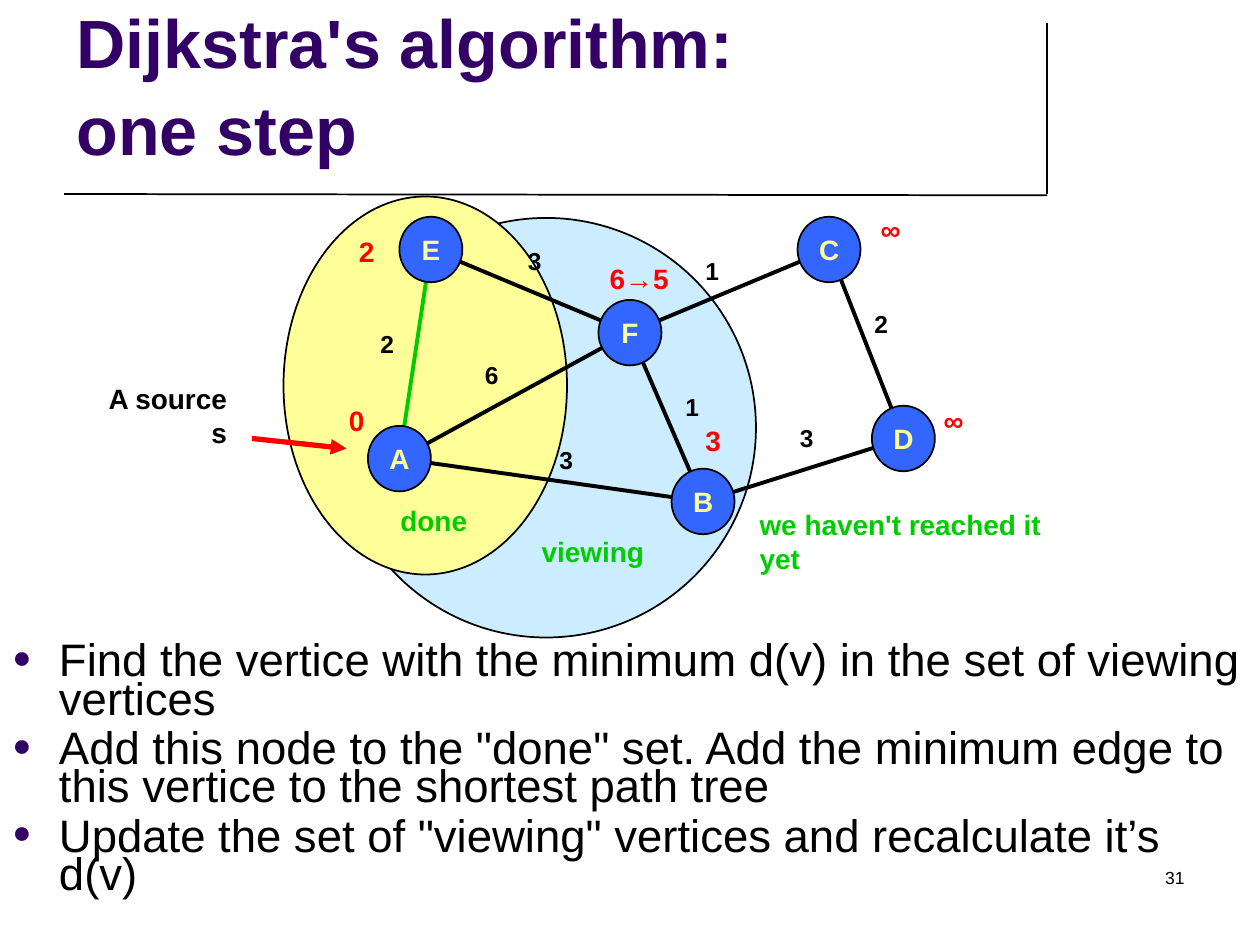
from pptx import Presentation
from pptx.dml.color import RGBColor
from pptx.enum.shapes import MSO_CONNECTOR, MSO_SHAPE
from pptx.enum.text import MSO_ANCHOR, MSO_AUTO_SIZE, PP_ALIGN
from pptx.oxml.ns import qn
from pptx.util import Inches, Pt
from lxml import etree

STRAIGHT = MSO_CONNECTOR.STRAIGHT
OVAL = MSO_SHAPE.OVAL
TOP, MIDDLE, BOTTOM = MSO_ANCHOR.TOP, MSO_ANCHOR.MIDDLE, MSO_ANCHOR.BOTTOM
LEFT, CENTER, RIGHT = PP_ALIGN.LEFT, PP_ALIGN.CENTER, PP_ALIGN.RIGHT
GROW = MSO_AUTO_SIZE.SHAPE_TO_FIT_TEXT

COLORS = {
    "black": "000000", "purple": "330066", "green": "00CC00", "red": "FF0000",
    "node": "3366FF", "done": "FFFF99", "viewing": "CCECFF",
}
NODE_W, NODE_H = 0.5, 0.52
NODES = {
    "A": (3.17, 3.64), "E": (3.42, 1.98), "F": (5, 2.64),
    "C": (6.58, 1.98), "D": (7.17, 3.48), "B": (5.58, 3.98),
}
EDGES = [
    ("E", "A", "2", 2.92, 2.56), ("F", "E", "3", 4.09, 1.9),
    ("F", "C", "1", 5.5, 1.98), ("C", "D", "2", 6.84, 2.4),
    ("B", "D", "3", 6.25, 3.31), ("B", "F", "1", 5.34, 3.06),
    ("A", "F", "6", 3.75, 2.81), ("A", "B", "3", 4.34, 3.48),
]
TREE = [("E", "A")]
DISTANCES = [
    ("0", 2.67, 3.15, 0.32), ("2", 2.75, 1.81, 0.32), ("3", 5.5, 3.31, 0.32),
    ("∞", 6.89, 1.64, 0.38), ("∞", 7.39, 3.15, 0.38),
]
STEPS = [
    "Find the vertice with the minimum d(v) in the set of viewing vertices",
    'Add this node to the "done" set. Add the minimum edge to this vertice to the shortest path tree',
    'Update the set of "viewing" vertices and recalculate it’s d(v)',
]


def rgb(name):
    return RGBColor.from_string(COLORS[name])


def write(p, text, size=16, color="black", bold=False, align=LEFT, spacing=None, before=0):
    p.alignment = align
    p.space_before = Pt(before)
    if spacing:
        p.line_spacing = spacing
    for i, line in enumerate(text.split("\n")):
        if i:
            p.add_line_break()
        r = p.add_run()
        r.text = line
        r.font.name = "Arial"
        r.font.size = Pt(size)
        r.font.bold = bold
        r.font.color.rgb = rgb(color)


class Deck:
    def __init__(self):
        self.prs = Presentation()
        self.prs.slide_width, self.prs.slide_height = Inches(10), Inches(7.5)
        self.s = self.prs.slides.add_slide(self.prs.slide_layouts[6])

    def line(self, start, end, color="black", width=1, arrow=False):
        c = self.s.shapes.add_connector(STRAIGHT, *map(Inches, (*start, *end)))
        c.line.color.rgb = rgb(color)
        c.line.width = Pt(width)
        if arrow:
            etree.SubElement(c.line._get_or_add_ln(), qn("a:tailEnd"), type="triangle")
        etree.SubElement(c._element.spPr, qn("a:effectLst"))

    def ellipse(self, x, y, w, h, fill):
        sp = self.s.shapes.add_shape(OVAL, *map(Inches, (x, y, w, h)))
        sp.shadow.inherit = False
        sp.fill.solid()
        sp.fill.fore_color.rgb = rgb(fill)
        sp.line.color.rgb = rgb("black")
        sp.line.width = Pt(1)
        return sp

    def node(self, name, x, y):
        sp = self.ellipse(x - NODE_W / 2, y - NODE_H / 2, NODE_W, NODE_H, "node")
        tf = sp.text_frame
        tf.vertical_anchor = MIDDLE
        write(tf.paragraphs[0], name, color="done", bold=True, align=CENTER)

    def box(self, x, y, w, h, anchor=TOP, wrap=True):
        tf = self.s.shapes.add_textbox(*map(Inches, (x, y, w, h))).text_frame
        tf.word_wrap = wrap
        tf.vertical_anchor = anchor
        return tf

    def text(self, text, x, y, w, h, anchor=TOP, wrap=True, **style):
        tf = self.box(x, y, w, h, anchor, wrap)
        write(tf.paragraphs[0], text, **style)
        return tf

    def label(self, text, x, y, w, h=0.37, wrap=False, **style):
        tf = self.text(text, x, y, w, h, wrap=wrap, bold=True, **style)
        tf.auto_size = GROW

    def bullets(self, items, x, y, w, h):
        tf = self.box(x, y, w, h)
        for i, item in enumerate(items):
            p = tf.add_paragraph() if i else tf.paragraphs[0]
            pPr = p._p.get_or_add_pPr()
            pPr.set("marL", str(Inches(0.37)))
            pPr.set("indent", str(-Inches(0.37)))
            clr = etree.SubElement(pPr, qn("a:buClr"))
            etree.SubElement(clr, qn("a:srgbClr"), val=COLORS["purple"])
            etree.SubElement(pPr, qn("a:buSzPct"), val="70000")
            etree.SubElement(pPr, qn("a:buFont"), typeface="Arial")
            etree.SubElement(pPr, qn("a:buChar"), char="●")
            write(p, item, size=26, spacing=0.7, before=6.5 if i else 0)


def main():
    deck = Deck()
    deck.line((8.31, 0.18), (8.31, 1.54))
    deck.line((0.51, 1.54), (8.31, 1.55))
    deck.text("31", 7.17, 6.83, 2.33, 0.5, size=10, align=RIGHT)
    deck.ellipse(2.67, 1.73, 3.33, 3.33, "viewing")
    deck.ellipse(2.25, 1.56, 2.25, 3, "done")
    deck.text("Dijkstra's algorithm:\none step", 0.51, 0.13, 7.79, 1.26, anchor=BOTTOM,
              size=39, color="purple", bold=True, spacing=1.06)
    deck.bullets(STEPS, 0, 5.08, 10, 2.42)

    for a, b, *_ in EDGES:
        color = "green" if (a, b) in TREE else "black"
        deck.line(NODES[a], NODES[b], color, 2.25)
    for name, (x, y) in NODES.items():
        deck.node(name, x, y)
    for _, _, weight, x, y in EDGES:
        deck.label(weight, x, y, 0.31, 0.34, size=14)

    deck.line((2, 3.48), (2.75, 3.56), "red", 3, arrow=True)
    for distance, x, y, w in DISTANCES:
        deck.label(distance, x, y, w, color="red")
    deck.text("6→5", 4.74, 2.03, 0.77, 0.37, color="red", bold=True)
    deck.label("done", 3.08, 3.95, 0.73, color="green")
    deck.label("viewing", 4.2, 4.19, 1.01, color="green")
    deck.label("we haven't reached it yet", 5.93, 3.98, 2.75, wrap=True, color="green")
    deck.label("A source s", 0.58, 2.98, 1.32, align=RIGHT)
    deck.prs.save("out.pptx")


if __name__ == "__main__":
    main()
